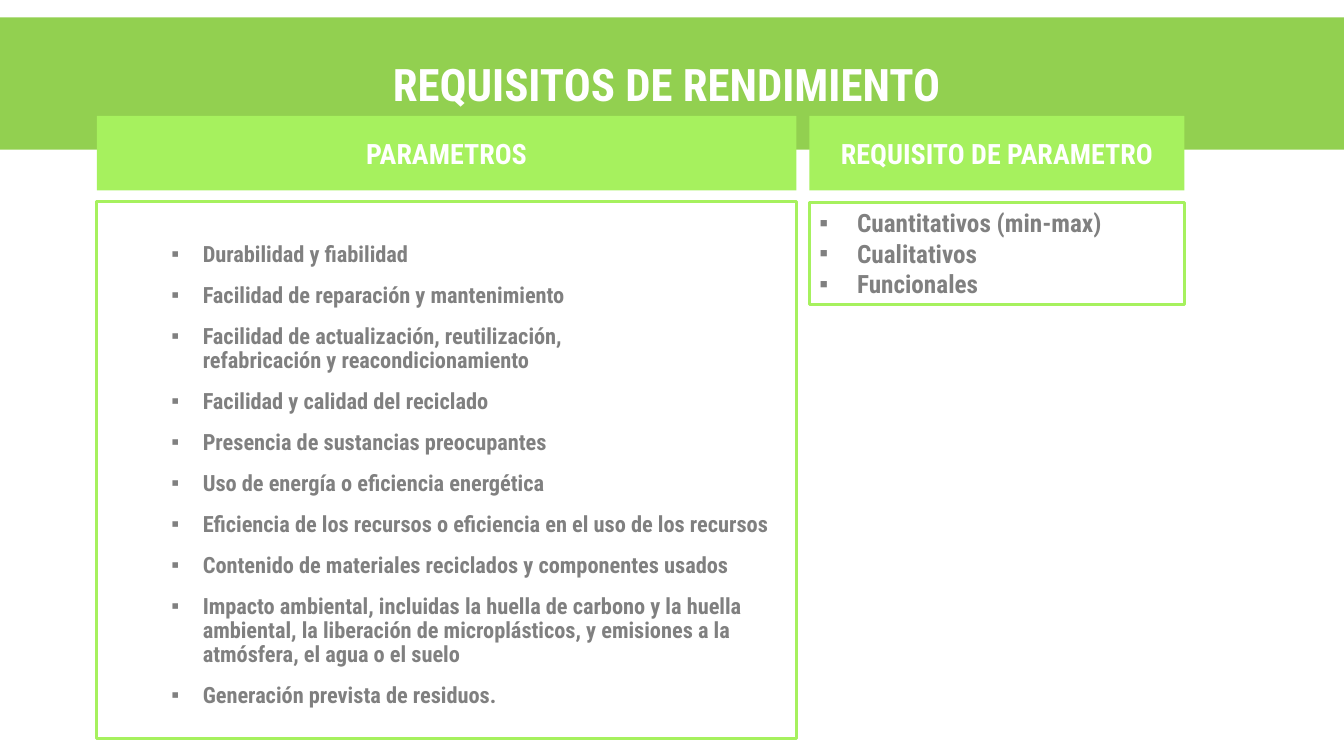
import pptx
import pptx.dml.color
import pptx.enum.shapes
import pptx.enum.text
import pptx.oxml.ns
import pptx.util
from lxml import etree

Cm = pptx.util.Cm
Pt = pptx.util.Pt
Align = pptx.enum.text.PP_ALIGN
Anchor = pptx.enum.text.MSO_ANCHOR

FONT = "Roboto Condensed"
BAND, LIME, WHITE, GREY = "92D050", "A6F15E", "FFFFFF", "808080"

TITLE = "REQUISITOS DE RENDIMIENTO "
PARAMETERS = [
    "Durabilidad y fiabilidad",
    "Facilidad de reparación y mantenimiento",
    "Facilidad de actualización, reutilización, \vrefabricación y reacondicionamiento",
    "Facilidad y calidad del reciclado",
    "Presencia de sustancias preocupantes",
    "Uso de energía o eficiencia energética",
    "Eficiencia de los recursos o eficiencia en el uso de los recursos",
    "Contenido de materiales reciclados y componentes usados",
    "Impacto ambiental, incluidas la huella de carbono y la huella ambiental, "
    "la liberación de microplásticos, y emisiones a la atmósfera, el agua o el suelo",
    "Generación prevista de residuos.",
]
REQUIREMENTS = ["Cuantitativos (min-max)", "Cualitativos", "Funcionales"]

SLIDE_WIDTH, SLIDE_HEIGHT = 33.87, 19.05
HEADER_TOP, HEADER_HEIGHT = 2.92, 1.88
COLUMNS = [("PARAMETROS", 2.44, 17.63), ("REQUISITO DE PARAMETRO", 20.4, 9.45)]


def color(value):
    return pptx.dml.color.RGBColor.from_string(value)


def place(shape, left, top, width, height):
    shape.left, shape.top = Cm(left), Cm(top)
    shape.width, shape.height = Cm(width), Cm(height)


def paint(shape, fill=None, line=None):
    if fill:
        shape.fill.solid()
        shape.fill.fore_color.rgb = color(fill)
    else:
        shape.fill.background()
    if line:
        shape.line.color.rgb = color(line)
        shape.line.width = Pt(2.25)
    else:
        shape.line.fill.background()


def add_box(slide, left, top, width, height, **style):
    shape = slide.shapes.add_shape(
        pptx.enum.shapes.MSO_SHAPE.RECTANGLE, Cm(left), Cm(top), Cm(width), Cm(height))
    shape.shadow.inherit = False
    paint(shape, **style)
    return shape


def add_bullet(paragraph, indent, hanging):
    properties = paragraph._p.get_or_add_pPr()
    properties.set("marL", str(Cm(indent)))
    properties.set("indent", str(-Cm(hanging)))
    qn = pptx.oxml.ns.qn
    etree.SubElement(properties, qn("a:buFont")).set("typeface", "Arial")
    etree.SubElement(properties, qn("a:buChar")).set("char", "▪")


def write(shape, lines, size, font_color, align=Align.LEFT, anchor=Anchor.TOP,
          spacing=1.0, gap=0, bullet=None):
    frame = shape.text_frame
    frame.word_wrap = True
    frame.auto_size = pptx.enum.text.MSO_AUTO_SIZE.NONE
    frame.vertical_anchor = anchor
    for index, line in enumerate(lines):
        paragraph = frame.add_paragraph() if index else frame.paragraphs[0]
        paragraph.text = line
        paragraph.alignment = align
        paragraph.line_spacing = spacing
        paragraph.space_before = paragraph.space_after = Pt(gap)
        if bullet:
            add_bullet(paragraph, *bullet)
        for run in paragraph.runs:
            run.font.name = FONT
            run.font.size = Pt(size)
            run.font.bold = True
            run.font.color.rgb = color(font_color)


def main():
    presentation = pptx.Presentation()
    presentation.slide_width = Cm(SLIDE_WIDTH)
    presentation.slide_height = Cm(SLIDE_HEIGHT)
    slide = presentation.slides.add_slide(presentation.slide_layouts[1])

    title = slide.shapes.title
    place(title, 0, 0.44, SLIDE_WIDTH, 3.33)
    paint(title, fill=BAND)
    write(title, [TITLE], 32, WHITE, align=Align.CENTER, anchor=Anchor.MIDDLE)

    for heading, left, width in COLUMNS:
        header = add_box(slide, left, HEADER_TOP, width, HEADER_HEIGHT, fill=LIME)
        write(header, [heading], 20, WHITE, align=Align.CENTER, anchor=Anchor.MIDDLE)

    (_, left, width), (_, right_left, right_width) = COLUMNS
    parameters = slide.placeholders[1]
    place(parameters, left, 5.08, width, 13.54)
    paint(parameters, line=LIME)
    parameters.text_frame.margin_left = 0
    parameters.text_frame.margin_top = Cm(1.04)
    write(parameters, PARAMETERS, 16, GREY, spacing=0.9, gap=6, bullet=(2.67, 0.79))

    requirements = add_box(slide, right_left, 5.11, right_width, 2.57, line=LIME)
    write(requirements, REQUIREMENTS, 18, GREY, bullet=(0.95, 0.95))

    presentation.save("out.pptx")


if __name__ == "__main__":
    main()
